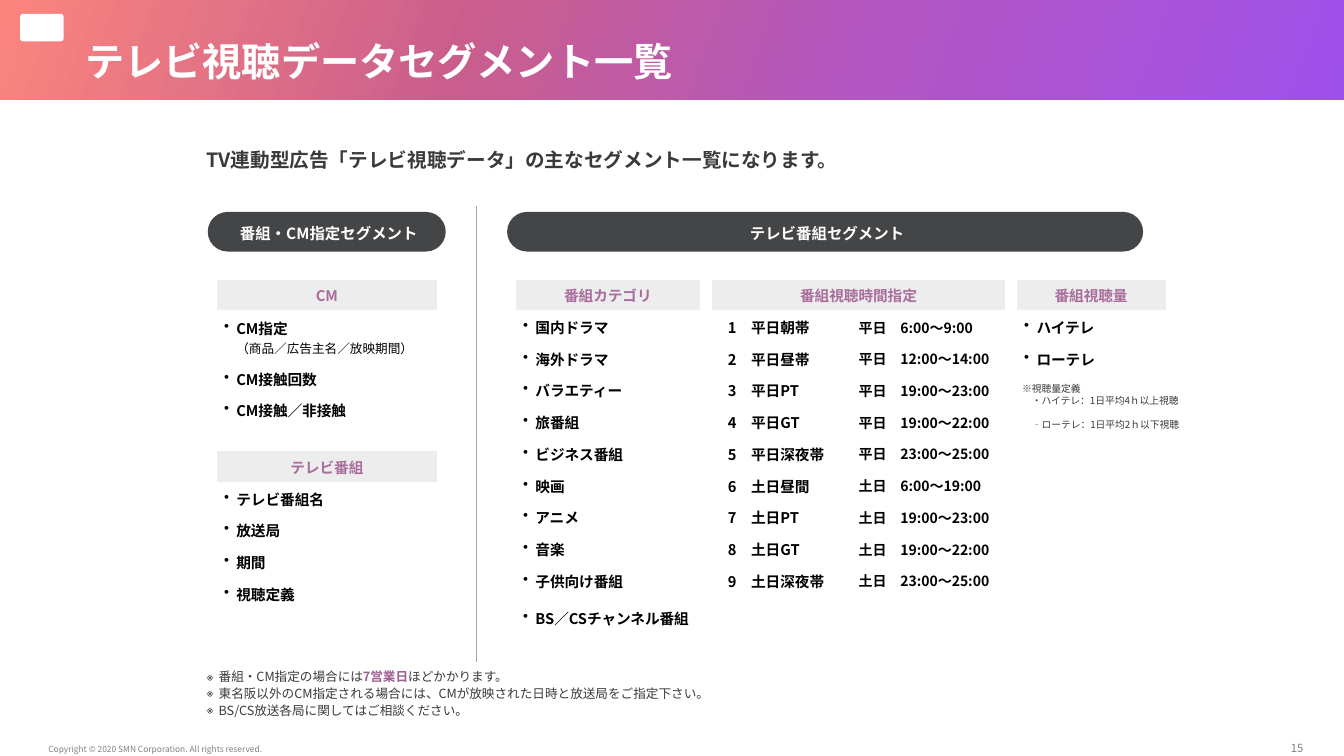
"""Builds the slide that lists the TV viewing data segments."""
from dataclasses import dataclass

from lxml import etree
from pptx import Presentation
from pptx.dml.color import RGBColor
from pptx.enum import shapes, text
from pptx.oxml.ns import qn
from pptx.util import Pt


@dataclass(frozen=True)
class Theme:
    """Colours, type sizes and font of the slide."""
    font: str = "Noto Sans CJK JP"
    white: str = "FFFFFF"
    black: str = "000000"
    ink: str = "393A39"
    pill: str = "444547"
    head: str = "EDEDED"
    mauve: str = "A86D9C"
    plum: str = "9F5E92"
    rule: str = "A5A5A5"
    grey: str = "808080"
    band: tuple = ((0, "FB857D"), (35, "C95E8D"), (66, "B256C5"), (100, "9F50EA"))
    title: float = 28
    lead: float = 14
    label: float = 11
    item: float = 10.5
    hours: float = 10
    note: float = 9
    page: float = 8
    tiny: float = 7
    legal: float = 6


T = Theme()
ROW = 22.65
TOP = 199.3
MID, LEFT = text.PP_ALIGN.CENTER, text.PP_ALIGN.LEFT


def rgb(code):
    """Turn a hex code into a colour."""
    return RGBColor.from_string(code)


def write(par, words, size=T.item, color=T.black, bold=False, align=LEFT,
          lead=None, before=0, dot=None, indent=0):
    """Add one run to a paragraph and format both."""
    par.alignment = align
    par.space_before = Pt(before)
    if lead:
        par.line_spacing = lead
    props = par._p.get_or_add_pPr()
    if dot and props.find(qn("a:buChar")) is None:
        props.set("marL", str(Pt(8.8)))
        props.set("indent", str(-Pt(8.8)))
        tint = etree.SubElement(props, qn("a:buClr"))
        etree.SubElement(tint, qn("a:srgbClr"), val=color)
        etree.SubElement(props, qn("a:buChar"), char=dot)
    elif indent:
        props.set("indent", str(Pt(indent)))
    run = par.add_run()
    run.text = words
    font = run.font
    font.name, font.size, font.bold = T.font, Pt(size), bold
    font.color.rgb = rgb(color)
    etree.SubElement(run._r.rPr, qn("a:ea"), typeface=T.font)


def frame(shape, pads=(0, 0, 0, 0), anchor=text.MSO_ANCHOR.TOP):
    """Set insets, wrapping and anchor, and return the text frame."""
    box = shape.text_frame
    box.word_wrap = True
    box.auto_size = text.MSO_AUTO_SIZE.NONE
    box.vertical_anchor = anchor
    (box.margin_left, box.margin_top,
     box.margin_right, box.margin_bottom) = map(Pt, pads)
    return box


def place(shape, *spot):
    """Move and size a placeholder."""
    shape.left, shape.top, shape.width, shape.height = map(Pt, spot)


def label(slide, spot, words, pads=(0, 0, 0, 0), **style):
    """Add a text box with one line."""
    box = frame(slide.shapes.add_textbox(*map(Pt, spot)), pads)
    write(box.paragraphs[0], words, **style)
    return box


def block(slide, spot, color, kind=shapes.MSO_SHAPE.ROUNDED_RECTANGLE, bend=None):
    """Add a plain filled shape."""
    shape = slide.shapes.add_shape(kind, *map(Pt, spot))
    shape.shadow.inherit = False
    shape.line.fill.background()
    shape.fill.solid()
    shape.fill.fore_color.rgb = rgb(color)
    if bend is not None:
        shape.adjustments[0] = bend
    return shape


def banner(slide):
    """Add the gradient band behind the title."""
    band = block(slide, (0, 0, 960, 71.3), T.white, shapes.MSO_SHAPE.RECTANGLE)
    band.fill.gradient()
    band.fill.gradient_angle = 340
    stops = band._element.spPr.find(".//" + qn("a:gsLst"))
    stops.clear()
    for share, code in T.band:
        stop = etree.SubElement(stops, qn("a:gs"), pos=str(share * 1000))
        etree.SubElement(stop, qn("a:srgbClr"), val=code)
    slide.shapes._spTree.insert(2, band._element)


def pill(slide, left, width, words):
    """Add a dark rounded heading."""
    shape = block(slide, (left, 151.4, width, 28.3), T.pill, bend=0.5)
    box = frame(shape, (3, 3, 0, 3), text.MSO_ANCHOR.MIDDLE)
    write(box.paragraphs[0], words, size=T.label, color=T.white, bold=True,
          align=MID, lead=1.2)


def divide(slide):
    """Add the vertical rule between the two groups."""
    line = slide.shapes.add_connector(
        shapes.MSO_CONNECTOR.STRAIGHT, *map(Pt, (340.4, 147, 340.4, 473)))
    line.line.color.rgb = rgb(T.rule)
    line.line.width = Pt(1)
    etree.SubElement(line._element.spPr, qn("a:effectLst"))


def fill_cell(cell, words, left, **style):
    """Write one bold table cell with no fill."""
    cell.fill.background()
    cell.vertical_anchor = text.MSO_ANCHOR.MIDDLE
    cell.margin_left, cell.margin_bottom = Pt(left), 0
    cell.margin_top = cell.margin_right = Pt(0.7)
    par = cell.text_frame.paragraphs[0]
    write(par, words, bold=True, **style)
    return par


def table(slide, left, top, width, title, rows, looks):
    """Add a table with a grey head; looks formats each column."""
    cols = len(looks)
    grid = slide.shapes.add_table(
        len(rows) + 1, cols, Pt(left), Pt(top), Pt(width),
        Pt(ROW * (len(rows) + 1))).table
    grid.first_row = grid.horz_banding = False
    for row in grid.rows:
        row.height = Pt(ROW)
    head = grid.cell(0, 0)
    if cols > 1:
        head.merge(grid.cell(0, cols - 1))
    fill_cell(head, title, 0.7, color=T.mauve, align=MID)
    head.fill.solid()
    head.fill.fore_color.rgb = rgb(T.head)
    for r, row in enumerate(rows, 1):
        for c, (words, look) in enumerate(zip(row, looks)):
            fill_cell(grid.cell(r, c), words, **look)
    return grid


def bullets(slide, left, top, width, title, items):
    """Add a one-column table of bulleted items."""
    return table(slide, left, top, width, title, [(item,) for item in items],
                 [dict(left=5.8, dot="•")])


def notes(box):
    """Write the list of remarks at the foot."""
    lines = [
        [("番組・CM指定の場合には", {}),
         ("7営業日", dict(color=T.plum, bold=True)), ("ほどかかります。", {})],
        [("東名阪以外のCM指定される場合には、CMが放映された日時と放送局をご指定下さい。", {})],
        [("BS/CS放送各局に関してはご相談ください。", {})],
    ]
    for i, line in enumerate(lines):
        par = box.add_paragraph() if i else box.paragraphs[0]
        for words, style in line:
            write(par, words, **{**dict(size=T.note, color=T.ink, lead=1.1, dot="※"), **style})


def main():
    """Build and save the slide."""
    deck = Presentation()
    deck.slide_width, deck.slide_height = Pt(960), Pt(540)
    slide = deck.slides.add_slide(deck.slide_layouts[1])
    title, body = slide.placeholders
    banner(slide)
    block(slide, (14.4, 10, 31, 19.5), T.white, bend=0.1)
    place(title, 33, 0, 927, 66.3)
    box = frame(title, (28, 28, 7.2, 3.6), text.MSO_ANCHOR.MIDDLE)
    write(box.paragraphs[0], "テレビ視聴データセグメント一覧", size=T.title,
          color=T.white, bold=True, lead=0.9)
    label(slide, (147.4, 102.2, 669, 30),
          "TV連動型広告「テレビ視聴データ」の主なセグメント一覧になります。",
          size=T.lead, color=T.ink, bold=True, lead=1.2)
    divide(slide)
    place(body, 147.4, 476, 669, 36.8)
    notes(frame(body, anchor=text.MSO_ANCHOR.BOTTOM))
    pill(slide, 148.4, 170, "番組・CM指定セグメント")
    pill(slide, 362.2, 454.3, "テレビ番組セグメント")

    bullets(slide, 154.3, 322, 158.5, "テレビ番組", ["テレビ番組名", "放送局", "期間", "視聴定義"])
    spots = bullets(slide, 154.3, TOP, 158.5, "CM", ["CM指定", "CM接触回数", "CM接触／非接触"])
    spots.rows[1].height = Pt(37)
    par = spots.cell(1, 0).text_frame.paragraphs[0]
    par.add_line_break()
    write(par, "（商品／広告主名／放映期間）", size=T.note)
    bullets(slide, 367.9, TOP, 132.7, "番組カテゴリ", [
        "国内ドラマ", "海外ドラマ", "バラエティー", "旅番組", "ビジネス番組",
        "映画", "アニメ", "音楽", "子供向け番組", "BS／CSチャンネル番組"])
    bullets(slide, 725.8, TOP, 107.2, "番組視聴量", ["ハイテレ", "ローテレ"])
    slots = [("平日", "朝帯", "6:00～9:00"), ("平日", "昼帯", "12:00～14:00"),
             ("平日", "PT", "19:00～23:00"), ("平日", "GT", "19:00～22:00"),
             ("平日", "深夜帯", "23:00～25:00"), ("土日", "昼間", "6:00～19:00"),
             ("土日", "PT", "19:00～23:00"), ("土日", "GT", "19:00～22:00"),
             ("土日", "深夜帯", "23:00～25:00")]
    rows = [(f"{n}　{day}{name}", f"{day}　{span}")
            for n, (day, name, span) in enumerate(slots, 1)]
    table(slide, 508.5, TOP, 209.6, "番組視聴時間指定", rows,
          [dict(left=11.5), dict(left=0, size=T.hours)])

    small = dict(size=T.tiny, color=T.ink)
    box = label(slide, (723, 270, 128, 50), "※視聴量定義", (7.2, 3.6, 7.2, 3.6), **small)
    write(box.add_paragraph(), "・ハイテレ：1日平均4ｈ以上視聴", indent=7, **small)
    write(box.add_paragraph(), "‐ローテレ：1日平均2ｈ以下視聴", indent=7, before=8.5, **small)
    pads = (7.2, 5.8, 7.2, 0)
    label(slide, (27.4, 525.6, 331, 13), "Copyright © 2020 SMN Corporation. All rights reserved.",
          pads, size=T.legal, color=T.grey)
    label(slide, (902, 523.4, 49, 15), "15", pads, size=T.page, color=T.grey, align=MID)
    deck.save("out.pptx")


if __name__ == "__main__":
    main()
